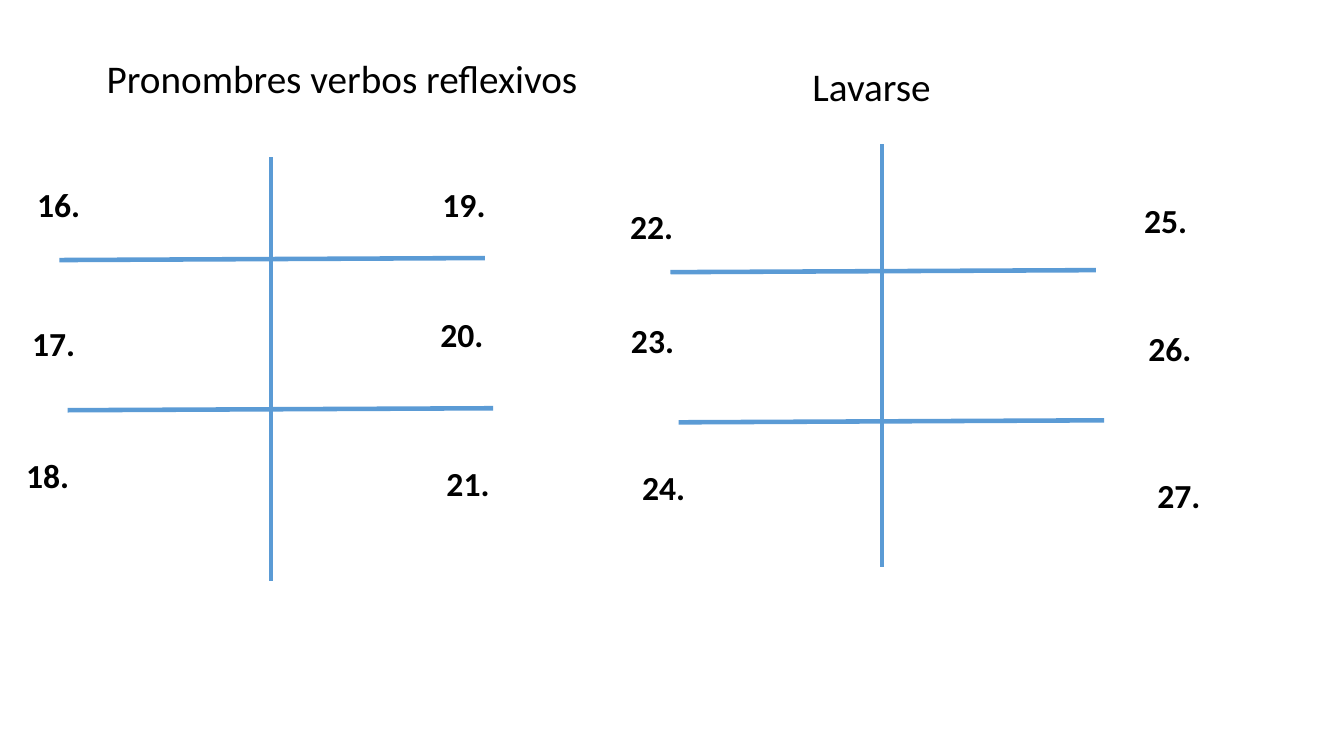
from lxml.etree import SubElement
from pptx import Presentation
from pptx.dml.color import RGBColor
from pptx.enum.shapes import MSO_CONNECTOR
from pptx.oxml.ns import qn
from pptx.util import Inches, Pt

BLUE, BLACK = "5B9BD5", "000000"
GRIDS = [
    {
        "title": ("Pronombres verbos reflexivos", 0.96, 0.49, 4.92),
        "axis": (2.69, 1.56),
        "bars": (0.59, 2.58),
        "first": 16,
        "spots": [(0.27, 1.78), (0.22, 3.15), (0.16, 4.46),
                  (4.29, 1.78), (4.27, 3.07), (4.33, 4.54)],
    },
    {
        "title": ("Lavarse", 7.96, 0.57, 1.98),
        "axis": (8.75, 1.43),
        "bars": (6.65, 2.7),
        "first": 22,
        "spots": [(6.15, 1.99), (6.16, 3.12), (6.27, 4.58),
                  (11.25, 1.93), (11.29, 3.2), (11.38, 4.66)],
    },
]
SPAN, TILT = 4.22, 0.02
SHIFT, GAP = 0.08, 1.49

deck = Presentation()
deck.slide_width, deck.slide_height = Inches(13.33), Inches(7.5)
slide = deck.slides.add_slide(deck.slide_layouts[6])


def color(code):
    return RGBColor.from_string(code)


def line(x, y, dx, dy, width):
    ends = [Inches(v) for v in (x, y, x + dx, y + dy)]
    rule = slide.shapes.add_connector(MSO_CONNECTOR.STRAIGHT, *ends)
    rule.line.color.rgb = color(BLUE)
    rule.line.width = Pt(width)
    SubElement(rule._element.spPr, qn("a:effectLst"))


def label(text, x, y, width, height, size, bold=False):
    box = slide.shapes.add_textbox(*[Inches(v) for v in (x, y, width, height)])
    box.text_frame.word_wrap = True
    para = box.text_frame.paragraphs[0]
    para.text = text
    font = para.font
    font.name, font.size, font.bold = "Calibri", Pt(size), bold
    font.color.rgb = color(BLACK)


for grid in GRIDS:
    line(*grid["axis"], 0, 4.2, 3)
    x, y = grid["bars"]
    for row in range(2):
        line(x + row * SHIFT, y + row * GAP, SPAN, -TILT, 3.25)
    label(*grid["title"], 0.57, 28)
    for number, (left, top) in enumerate(grid["spots"], grid["first"]):
        label(f"{number}.", left, top, 0.95, 0.5, 24, True)

deck.save("out.pptx")
